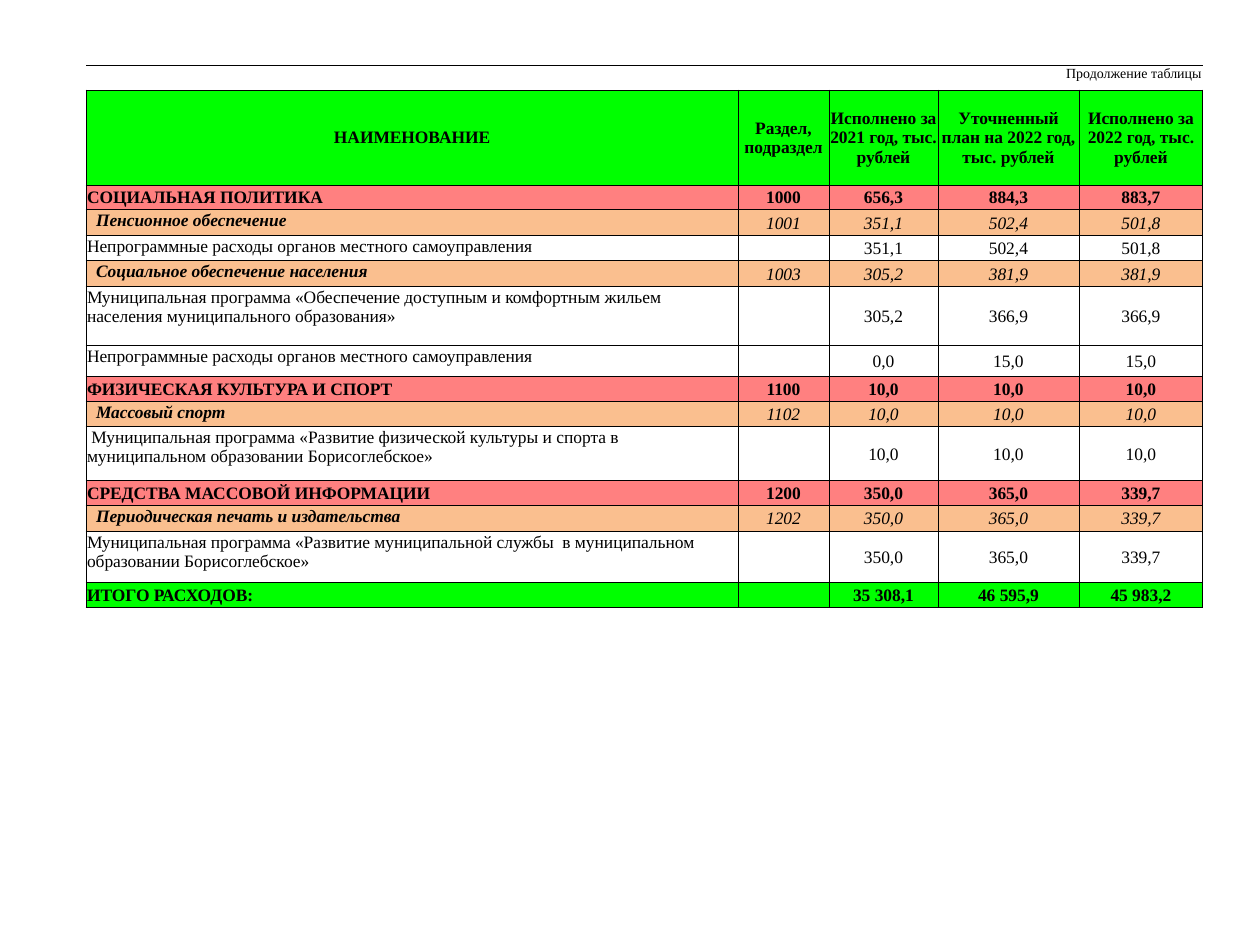
from dataclasses import dataclass

from lxml import etree
from pptx import Presentation
from pptx import util as u
from pptx.dml.color import RGBColor
from pptx.enum import text
from pptx.oxml import ns

EMU_PER_PX = 7286
FONT = "Times New Roman"
BLACK = "000000"
LEFT, CENTER = text.PP_ALIGN.LEFT, text.PP_ALIGN.CENTER
RIGHT, JUSTIFY = text.PP_ALIGN.RIGHT, text.PP_ALIGN.JUSTIFY
TOP, MIDDLE = text.MSO_ANCHOR.TOP, text.MSO_ANCHOR.MIDDLE
COLUMN_WIDTHS = [652, 91, 109, 141, 124]
CAPTION_HEIGHT = 25


@dataclass(frozen=True)
class RowStyle:
    fill: str | None = None
    bold_name: bool = False
    bold_values: bool = False
    italic: bool = False
    name_align: text.PP_ALIGN = LEFT
    name_anchor: text.MSO_ANCHOR = TOP
    name_margin: int = 1


@dataclass(frozen=True)
class BudgetRow:
    style: RowStyle
    height: int
    name: str
    code: str
    values: tuple[str, str, str]


HEADER = RowStyle("00FF00", True, True, name_align=CENTER, name_anchor=MIDDLE)
SECTION = RowStyle("FF8080", True, True, name_align=JUSTIFY, name_anchor=MIDDLE)
SUBSECTION = RowStyle("FABF8F", bold_name=True, italic=True, name_margin=10)
PROGRAM = RowStyle()
TOTAL = RowStyle("00FF00", True, True, name_anchor=MIDDLE)

ROWS = [
    BudgetRow(HEADER, 95, "НАИМЕНОВАНИЕ", "Раздел, подраздел",
              ("Исполнено за 2021 год, тыс. рублей",
               "Уточненный план на 2022 год, тыс. рублей",
               "Исполнено за 2022 год, тыс. рублей")),
    BudgetRow(SECTION, 25, "СОЦИАЛЬНАЯ ПОЛИТИКА", "1000",
              ("656,3", "884,3", "883,7")),
    BudgetRow(SUBSECTION, 26, "Пенсионное обеспечение", "1001",
              ("351,1", "502,4", "501,8")),
    BudgetRow(PROGRAM, 25,
              "Непрограммные расходы органов местного самоуправления", "",
              ("351,1", "502,4", "501,8")),
    BudgetRow(SUBSECTION, 26, "Социальное обеспечение населения", "1003",
              ("305,2", "381,9", "381,9")),
    BudgetRow(PROGRAM, 59,
              "Муниципальная программа «Обеспечение доступным и комфортным "
              "жильем населения муниципального образования»", "",
              ("305,2", "366,9", "366,9")),
    BudgetRow(PROGRAM, 31,
              "Непрограммные расходы органов местного самоуправления", "",
              ("0,0", "15,0", "15,0")),
    BudgetRow(SECTION, 25, "ФИЗИЧЕСКАЯ КУЛЬТУРА И СПОРТ", "1100",
              ("10,0", "10,0", "10,0")),
    BudgetRow(SUBSECTION, 25, "Массовый спорт", "1102",
              ("10,0", "10,0", "10,0")),
    BudgetRow(PROGRAM, 54,
              " Муниципальная программа «Развитие физической культуры и спорта "
              "в муниципальном образовании Борисоглебское»", "",
              ("10,0", "10,0", "10,0")),
    BudgetRow(SECTION, 25, "СРЕДСТВА МАССОВОЙ ИНФОРМАЦИИ", "1200",
              ("350,0", "365,0", "339,7")),
    BudgetRow(SUBSECTION, 26, "Периодическая печать и издательства", "1202",
              ("350,0", "365,0", "339,7")),
    BudgetRow(PROGRAM, 51,
              "Муниципальная программа «Развитие муниципальной службы  "
              "в муниципальном образовании Борисоглебское»", "",
              ("350,0", "365,0", "339,7")),
    BudgetRow(TOTAL, 25, "ИТОГО РАСХОДОВ:", "",
              ("35 308,1", "46 595,9", "45 983,2")),
]


def px(length: int) -> u.Emu:
    return u.Emu(length * EMU_PER_PX)


def color(value: str) -> RGBColor:
    return RGBColor.from_string(value)


def set_borders(cell, visible: str = "LRTB") -> None:
    """Draw thin black lines on the given sides and none on the others."""
    properties = cell._tc.get_or_add_tcPr()
    for index, side in enumerate("LRTB"):
        line = etree.Element(ns.qn(f"a:ln{side}"), w=str(u.Pt(0.5)))
        if side in visible:
            fill = etree.SubElement(line, ns.qn("a:solidFill"))
            etree.SubElement(fill, ns.qn("a:srgbClr"), val=BLACK)
        else:
            etree.SubElement(line, ns.qn("a:noFill"))
        properties.insert(index, line)


def fill_cell(cell, fill: str | None) -> None:
    if fill:
        cell.fill.solid()
        cell.fill.fore_color.rgb = color(fill)
    else:
        cell.fill.background()


def write_cell(cell, content: str, align: text.PP_ALIGN = CENTER,
               anchor: text.MSO_ANCHOR = MIDDLE, size: int = 10,
               bold: bool = False, italic: bool = False, margin: int = 1) -> None:
    cell.margin_left = px(margin)
    cell.margin_right = cell.margin_top = px(1)
    cell.margin_bottom = 0
    cell.vertical_anchor = anchor
    para = cell.text_frame.paragraphs[0]
    para.alignment = align
    font = para.font
    font.name, font.size = FONT, u.Pt(size)
    font.bold, font.italic = bold, italic
    font.color.rgb = color(BLACK)
    if content:
        para.add_run().text = content
    else:
        # An empty cell takes its line height from the end mark.
        etree.SubElement(para._p, ns.qn("a:endParaRPr"), sz=str(size * 100))


def write_caption(table) -> None:
    cells = [table.cell(0, column) for column in range(len(COLUMN_WIDTHS))]
    for cell in cells:
        fill_cell(cell, None)
        set_borders(cell, "TB")
    cells[0].merge(cells[-1])
    write_cell(cells[0], "Продолжение таблицы", RIGHT, TOP, size=8)


def write_row(table, index: int, row: BudgetRow) -> None:
    style = row.style
    name_cell, *value_cells = table.rows[index].cells
    write_cell(name_cell, row.name, style.name_align, style.name_anchor,
               bold=style.bold_name, italic=style.italic,
               margin=style.name_margin)
    for cell, content in zip(value_cells, (row.code, *row.values)):
        write_cell(cell, content, bold=style.bold_values, italic=style.italic)
    for cell in (name_cell, *value_cells):
        fill_cell(cell, style.fill)
        set_borders(cell)


def main() -> None:
    deck = Presentation()
    deck.slide_width, deck.slide_height = px(1260), px(941)
    page = deck.slides.add_slide(deck.slide_layouts[6])
    heights = [CAPTION_HEIGHT, *(row.height for row in ROWS)]
    table = page.shapes.add_table(
        len(heights), len(COLUMN_WIDTHS), px(86), px(65),
        px(sum(COLUMN_WIDTHS)), px(sum(heights))).table
    table.first_row = table.horz_banding = False
    for column, width in zip(table.columns, COLUMN_WIDTHS):
        column.width = px(width)
    for table_row, height in zip(table.rows, heights):
        table_row.height = px(height)
    write_caption(table)
    for index, row in enumerate(ROWS, start=1):
        write_row(table, index, row)
    deck.save("out.pptx")


if __name__ == "__main__":
    main()
